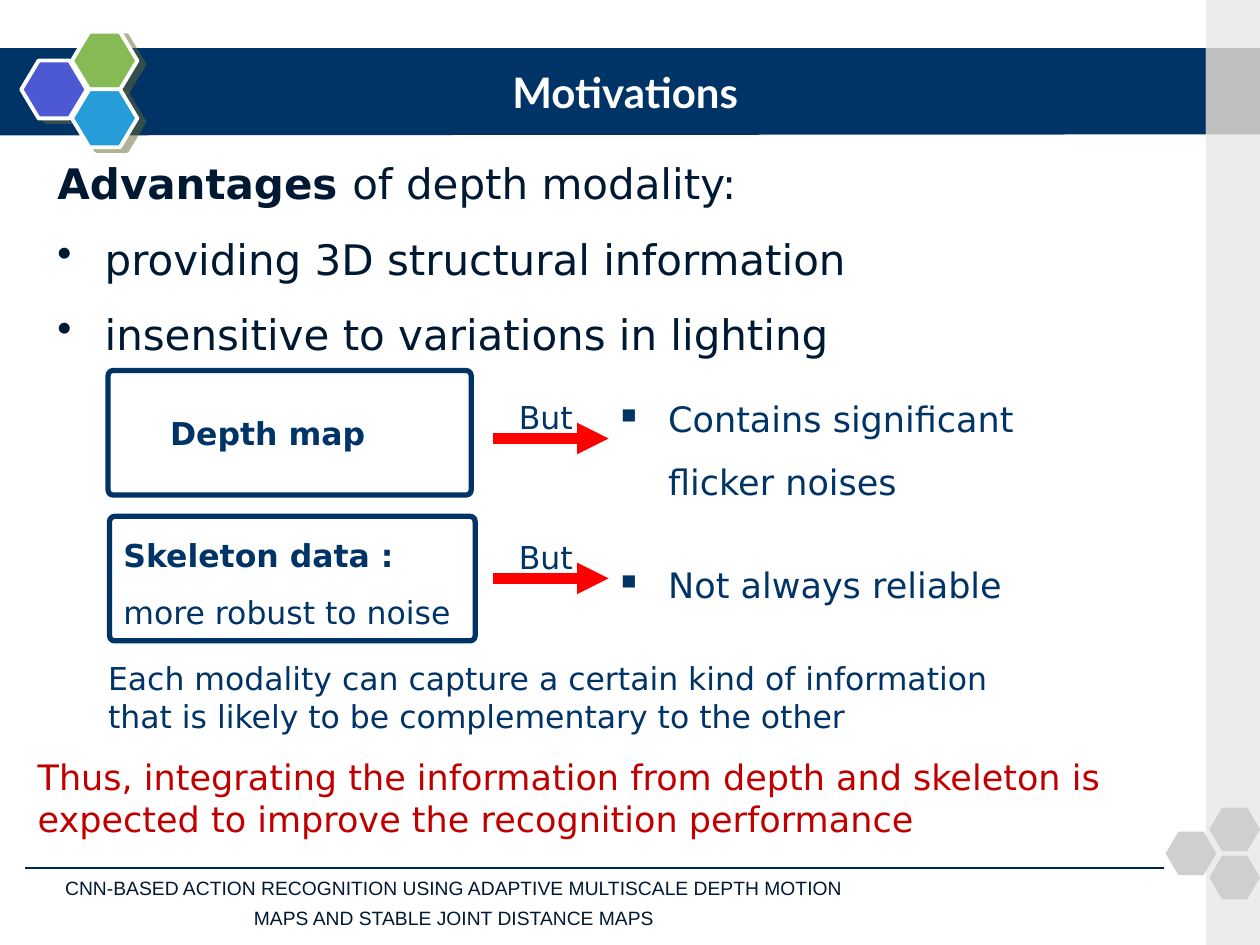
from lxml import etree
from pptx import Presentation
from pptx.dml.color import RGBColor
from pptx.enum.shapes import MSO_CONNECTOR, MSO_SHAPE
from pptx.enum.text import MSO_ANCHOR, MSO_AUTO_SIZE, PP_ALIGN
from pptx.oxml import parse_xml
from pptx.oxml.ns import qn
from pptx.util import Cm, Pt

RECTANGLE, HEXAGON = MSO_SHAPE.RECTANGLE, MSO_SHAPE.HEXAGON
ROUNDED = MSO_SHAPE.ROUNDED_RECTANGLE
STRAIGHT = MSO_CONNECTOR.STRAIGHT
MIDDLE, CENTER = MSO_ANCHOR.MIDDLE, PP_ALIGN.CENTER
FIT_SHAPE = MSO_AUTO_SIZE.SHAPE_TO_FIT_TEXT
NAVY, DARK, RED, WHITE = "003366", "001933", "C00000", "FFFFFF"
BODY_FONT = "DejaVu Sans"
NAMESPACE = 'xmlns:a="http://schemas.openxmlformats.org/drawingml/2006/main"'
SHADOW = (
    f'<a:effectLst {NAMESPACE}><a:outerShdw dist="57150" dir="1620000" algn="ctr" rotWithShape="0">'
    '<a:srgbClr val="666633"><a:alpha val="50000"/></a:srgbClr></a:outerShdw></a:effectLst>'
)


def color(value):
    """Turn a hex string into a colour."""
    return RGBColor.from_string(value)


def style_shape(shape, fill=None, line=None, width=1):
    """Set fill and outline of a shape and remove its shadow."""
    shape.shadow.inherit = False
    if fill:
        shape.fill.solid()
        shape.fill.fore_color.rgb = color(fill)
    else:
        shape.fill.background()
    if line:
        shape.line.color.rgb = color(line)
        shape.line.width = Pt(width)
    else:
        shape.line.fill.background()


def add_box(shapes, kind, box, **style):
    """Add a styled preset shape in a box given in centimetres."""
    shape = shapes.add_shape(kind, *map(Cm, box))
    style_shape(shape, **style)
    return shape


def add_line(slide, start, end, line, width, arrow=False):
    """Add a straight line, with an arrowhead at its end if asked."""
    connector = slide.shapes.add_connector(STRAIGHT, *map(Cm, start + end))
    connector.line.color.rgb = color(line)
    connector.line.width = Pt(width)
    properties = connector.element.spPr
    if arrow:
        etree.SubElement(properties.find(qn("a:ln")), qn("a:tailEnd"), type="triangle")
    etree.SubElement(properties, qn("a:effectLst"))


def add_bullet(paragraph, character, percent):
    """Give a paragraph a hanging bullet."""
    properties = paragraph._p.get_or_add_pPr()
    indent = Cm(0.95)
    properties.set("marL", str(indent))
    properties.set("indent", str(-indent))
    etree.SubElement(properties, qn("a:buSzPct"), val=str(percent * 1000))
    etree.SubElement(properties, qn("a:buChar"), char=character)


def add_runs(paragraph, runs, size, text_color, font):
    """Add (text, bold) runs to a paragraph."""
    for text, bold in runs:
        run = paragraph.add_run()
        run.text = text
        run.font.size = Pt(size)
        run.font.name = font
        run.font.bold = bold
        run.font.color.rgb = color(text_color)


def add_text(slide, box, paragraphs, size, text_color=NAVY, wrap=True):
    """Add a text box; each paragraph is (runs, line spacing, bullet)."""
    frame = slide.shapes.add_textbox(*map(Cm, box)).text_frame
    frame.word_wrap = wrap
    frame.auto_size = FIT_SHAPE
    for index, (runs, spacing, bullet) in enumerate(paragraphs):
        paragraph = frame.add_paragraph() if index else frame.paragraphs[0]
        paragraph.line_spacing = spacing
        if bullet:
            add_bullet(paragraph, *bullet)
        add_runs(paragraph, runs, size, text_color, BODY_FONT)


def add_hexagon_trio(slide, box, size, fills, adjustment, line=None, shadow=False):
    """Place one hexagon at the left and two stacked at the right of a box."""
    left, top, width, height = box
    wide, high = size
    right = left + width - wide
    places = [(left, top + (height - high) / 2), (right, top), (right, top + height - high)]
    group = slide.shapes.add_group_shape()
    for place, fill in zip(places, fills):
        hexagon = add_box(group.shapes, HEXAGON, place + size, fill=fill, line=line, width=2.25)
        hexagon.adjustments[0] = adjustment
        if shadow:
            properties = hexagon.element.spPr
            properties.replace(properties.find(qn("a:effectLst")), parse_xml(SHADOW))


def add_backdrop(slide, box):
    """Draw the title band, the side strip and the hexagons."""
    left, top, width, height = box
    strip = 1.09
    edge, band_top, band_height = left + width - strip, top + 0.97, 1.74
    builder = slide.shapes.build_freeform(Cm(left - 0.08), Cm(band_top))
    builder.add_line_segments([
        (Cm(edge), Cm(band_top)),
        (Cm(edge), Cm(band_top + band_height)),
        (Cm(left - 0.08), Cm(band_top + band_height + 0.02)),
    ])
    style_shape(builder.convert_to_shape(), fill=NAVY)
    add_hexagon_trio(slide, (left + 0.43, top + 0.64, 2.34, 2.33), (1.32, 1.17),
                     ("4C59D2", "85BA54", "269DD8"), 0.3, WHITE, True)
    add_box(slide.shapes, RECTANGLE, (edge, top, strip, height), fill="ECECEC")
    add_box(slide.shapes, RECTANGLE, (edge, band_top, strip, band_height), fill="C0C0C0")
    add_hexagon_trio(slide, (left + 23.5, top + 16.28, 1.9, 1.85), (1.02, 0.88),
                     ("CFCFCF",) * 3, 0.29)


def add_title(slide, box, text):
    """Place and format the title in front of the band."""
    title = slide.shapes.title
    title.element.getparent().append(title.element)
    title.left, title.top, title.width, title.height = map(Cm, box)
    title.text_frame.vertical_anchor = MIDDLE
    paragraph = title.text_frame.paragraphs[0]
    paragraph.alignment = CENTER
    add_runs(paragraph, [(text, True)], 24, WHITE, "Lato")


def add_footer(slide, box, lines):
    """Add the rule and the paper name below it."""
    left, top, width, height = box
    add_line(slide, (left + 0.97, top - 0.18), (left + 23.93, top - 0.18), "00264D", 1.5)
    frame = slide.shapes.add_textbox(*map(Cm, box)).text_frame
    frame.word_wrap = True
    frame.vertical_anchor = MIDDLE
    paragraph = frame.paragraphs[0]
    paragraph.alignment = CENTER
    paragraph.line_spacing = 1.3
    for index, line in enumerate(lines):
        if index:
            paragraph.add_line_break()
        add_runs(paragraph, [(line, False)], 11, DARK, "Arial")


def add_modality(slide, frame_box, label_box, label, drawback_box, drawback, arrow_top, wrap):
    """Add a framed modality, the But arrow and its drawback."""
    frame = add_box(slide.shapes, ROUNDED, frame_box, line=NAVY, width=3)
    frame.adjustments[0] = 0.04
    add_text(slide, label_box, label, 18, wrap=wrap)
    add_line(slide, (9.93, arrow_top), (12.27, arrow_top), "FF0000", 6, arrow=True)
    add_text(slide, (10.21, arrow_top - 0.94, 1.6, 1.02),
             [([("But", False)], 1, None)], 18, wrap=False)
    add_text(slide, drawback_box, [([(drawback, False)], 1.5, ("■", 60))], 20)


def main():
    """Build the Motivations slide."""
    presentation = Presentation()
    presentation.slide_width, presentation.slide_height = Cm(25.4), Cm(19.05)
    slide = presentation.slides.add_slide(presentation.slide_layouts[5])
    add_backdrop(slide, (0, 0, 25.4, 19.05))
    add_title(slide, (3.18, 1.07, 18.85, 1.57), "Motivations")
    add_footer(slide, (-0.46, 17.68, 19.23, 0.89), (
        "CNN-BASED ACTION RECOGNITION USING ADAPTIVE MULTISCALE DEPTH MOTION",
        "MAPS AND STABLE JOINT DISTANCE MAPS"))
    add_text(slide, (0.91, 3.05, 24.23, 4.37), [
        ([("Advantages ", True), ("of depth modality:", False)], 1, None),
        ([("providing 3D structural information", False)], 1.5, ("•", 100)),
        ([("insensitive to variations in lighting", False)], 1.5, ("•", 100)),
    ], 24, DARK)
    add_text(slide, (0.51, 15.11, 24, 1.96), [([(
        "Thus, integrating the information from depth and skeleton is "
        "expected to improve the recognition performance", False)], 1, None)], 20, RED)
    add_modality(slide, (2.18, 7.47, 7.32, 2.51), (3.18, 8.23, 4.45, 1.02),
                 [([("Depth map", True)], 1, None)],
                 (12.27, 7.47, 10.13, 2.64), "Contains significant flicker noises", 8.84, False)
    add_modality(slide, (2.21, 10.41, 7.37, 2.51), (2.24, 10.31, 8.61, 2.57),
                 [([("Skeleton data :", True)], 1.5, None),
                  ([("more robust to noise", False)], 1.5, None)],
                 (12.27, 10.82, 10.13, 1.37), "Not always reliable", 11.66, True)
    add_text(slide, (1.93, 13.16, 22.2, 1.8), [
        ([("Each modality can capture a certain kind of information", False)], 1, None),
        ([("that is likely to be complementary to the other", False)], 1, None),
    ], 18)
    presentation.save("out.pptx")


if __name__ == "__main__":
    main()
